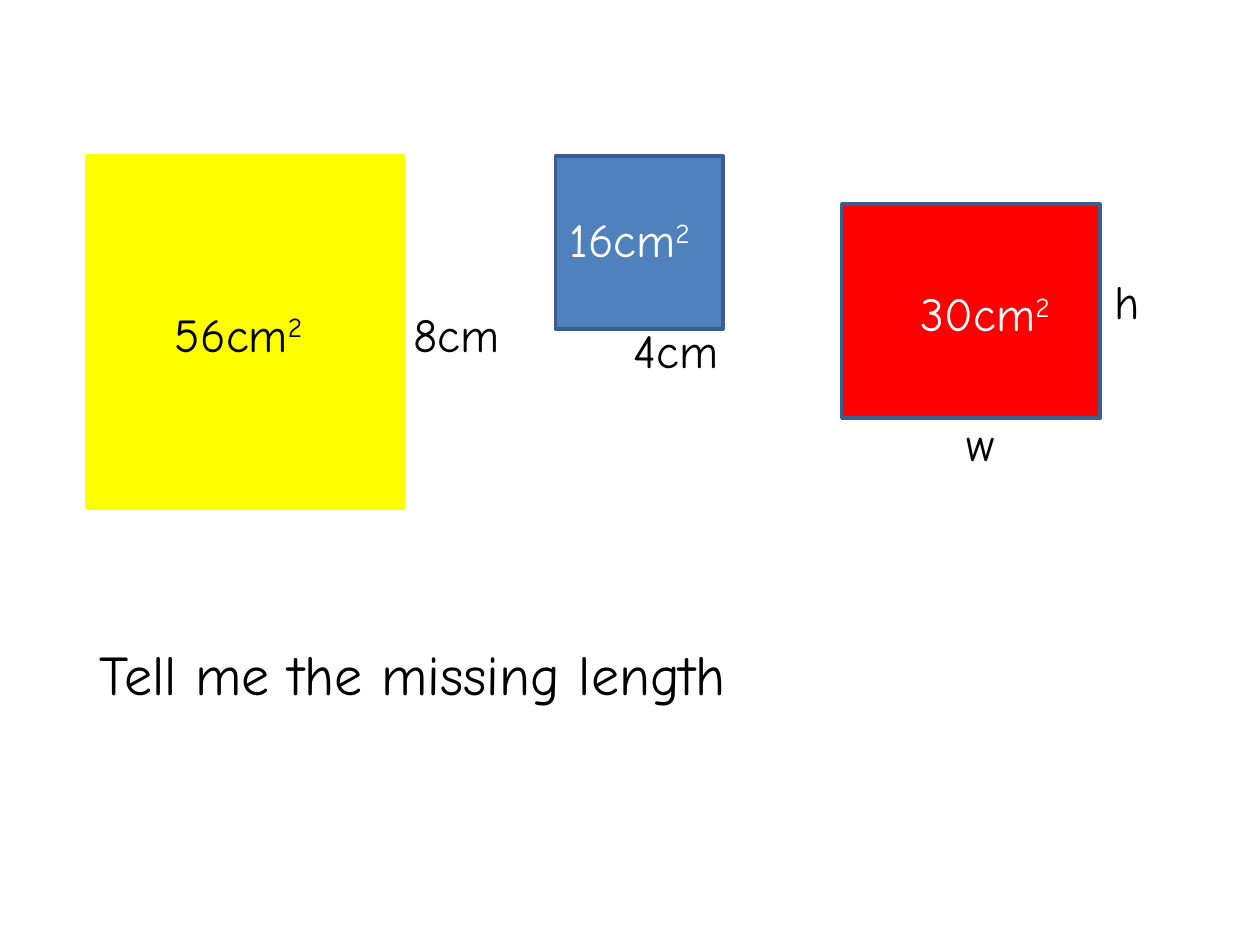
from dataclasses import dataclass

from pptx import Presentation
from pptx.dml.color import RGBColor
from pptx.enum.shapes import MSO_SHAPE
from pptx.slide import Slide
from pptx.util import Inches, Pt

RECTANGLE = MSO_SHAPE.RECTANGLE
FONT = "Comic Neue"
BLACK = "000000"
WHITE = "FFFFFF"
YELLOW = "FFFF00"
BLUE = "4F81BD"
DARK_BLUE = "3A5F8C"
RED = "FF0000"


@dataclass
class Box:
    left: float
    top: float
    width: float
    height: float
    fill: str
    line: str


@dataclass
class Label:
    text: str
    left: float
    top: float
    width: float
    height: float = 0.56
    color: str = BLACK
    size: int = 27
    superscript: str = ""


BOXES = [
    Box(0.69, 1.24, 2.51, 2.79, YELLOW, YELLOW),
    Box(4.41, 1.24, 1.33, 1.37, BLUE, DARK_BLUE),
    Box(6.68, 1.62, 2.05, 1.7, RED, DARK_BLUE),
]

LABELS = [
    Label("Tell me the missing length", 0.69, 5.03, 8.62, 0.97, size=32),
    Label("w", 7.57, 3.24, 0.77),
    Label("h", 8.75, 2.11, 0.28),
    Label("56cm", 1.29, 2.37, 1.47, superscript="2"),
    Label("8cm", 3.18, 2.37, 1.14),
    Label("4cm", 4.93, 2.5, 1.14),
    Label("16cm", 4.42, 1.62, 1.33, color=WHITE, superscript="2"),
    Label("30cm", 7.21, 2.21, 1.36, color=WHITE, superscript="2"),
]


def rgb(color: str) -> RGBColor:
    return RGBColor.from_string(color)


def draw_box(s: Slide, box: Box) -> None:
    sp = s.shapes.add_shape(RECTANGLE, Inches(box.left), Inches(box.top),
                            Inches(box.width), Inches(box.height))
    sp.shadow.inherit = False
    sp.fill.solid()
    sp.fill.fore_color.rgb = rgb(box.fill)
    sp.line.color.rgb = rgb(box.line)
    sp.line.width = Pt(2)


def draw_label(s: Slide, label: Label) -> None:
    sp = s.shapes.add_textbox(Inches(label.left), Inches(label.top),
                              Inches(label.width), Inches(label.height))
    tf = sp.text_frame
    tf.word_wrap = True
    p = tf.paragraphs[0]
    p.font.name = FONT
    p.font.size = Pt(label.size)
    p.font.color.rgb = rgb(label.color)
    p.add_run().text = label.text
    if label.superscript:
        r = p.add_run()
        r.text = label.superscript
        r._r.get_or_add_rPr().set("baseline", "30000")


def main() -> None:
    prs = Presentation()
    prs.slide_width = Inches(10)
    prs.slide_height = Inches(7.5)
    s = prs.slides.add_slide(prs.slide_layouts[6])
    for box in BOXES:
        draw_box(s, box)
    for label in LABELS:
        draw_label(s, label)
    prs.save("out.pptx")


if __name__ == "__main__":
    main()
